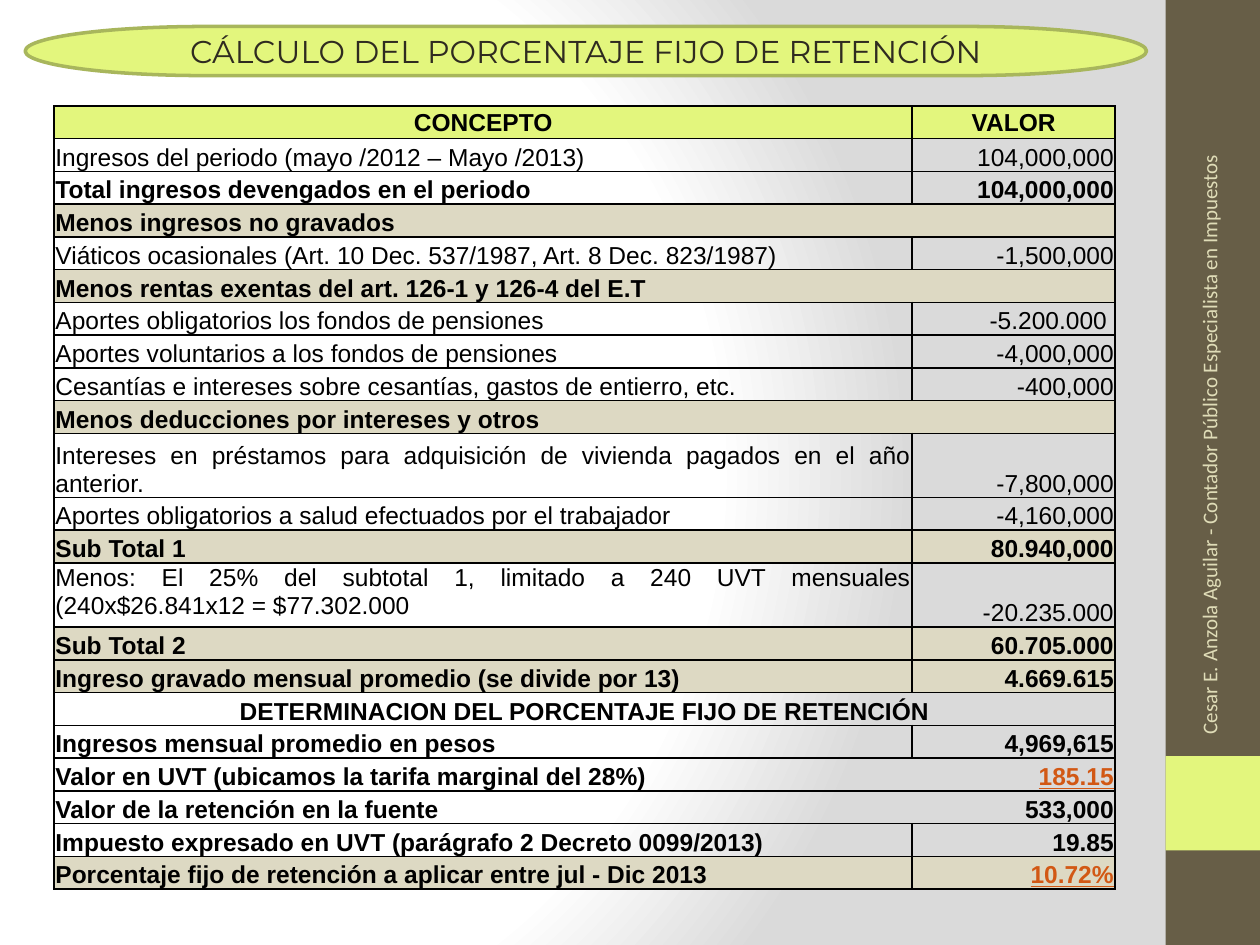
from pptx import Presentation
from pptx.dml.color import RGBColor
from pptx.enum.shapes import MSO_SHAPE
from pptx.enum.text import MSO_ANCHOR, PP_ALIGN
from pptx.oxml import parse_xml
from pptx.oxml.ns import nsdecls, qn
from pptx.util import Inches, Pt

BROWN = RGBColor(0x67, 0x5E, 0x47)
LIME = RGBColor(0xE3, 0xF6, 0x7D)
OLIVE = RGBColor(0xA8, 0xB6, 0x5C)
SAND = RGBColor(0xDF, 0xDC, 0xB7)
DARK = RGBColor(0x2F, 0x2B, 0x20)
TAN = RGBColor(0xDD, 0xD9, 0xC3)
BLACK = RGBColor(0, 0, 0)
RUST = RGBColor(0xD2, 0x58, 0x14)
LEFT, MID, RIGHT, JUST = PP_ALIGN.LEFT, PP_ALIGN.CENTER, PP_ALIGN.RIGHT, PP_ALIGN.JUSTIFY

# Label, value (None spans both columns), bold, fill, label alignment
ROWS = [
    ("CONCEPTO", "VALOR", True, LIME, MID),
    ("Ingresos del periodo (mayo /2012 – Mayo /2013)", "104,000,000", False, None, LEFT),
    ("Total ingresos devengados en el periodo", "104,000,000", True, None, LEFT),
    ("Menos ingresos no gravados", None, True, TAN, LEFT),
    ("Viáticos ocasionales (Art. 10 Dec. 537/1987, Art. 8 Dec. 823/1987)",
     "-1,500,000", False, None, JUST),
    ("Menos rentas exentas del art. 126-1 y 126-4 del E.T", None, True, TAN, LEFT),
    ("Aportes obligatorios los fondos de pensiones", "-5.200.000 ", False, None, LEFT),
    ("Aportes voluntarios a los fondos de pensiones", "-4,000,000", False, None, LEFT),
    ("Cesantías e intereses sobre cesantías, gastos de entierro, etc.",
     "-400,000", False, None, LEFT),
    ("Menos deducciones por intereses y otros", None, True, TAN, LEFT),
    ("Intereses en préstamos para adquisición de vivienda pagados en el año anterior.",
     "-7,800,000", False, None, JUST),
    ("Aportes obligatorios a salud efectuados por el trabajador",
     "-4,160,000", False, None, JUST),
    ("Sub Total 1", "80.940,000", True, TAN, LEFT),
    ("Menos: El 25% del subtotal 1, limitado a 240 UVT mensuales (240x$26.841x12 = $77.302.000",
     "-20.235.000", False, None, JUST),
    ("Sub Total 2", "60.705.000", True, TAN, LEFT),
    ("Ingreso gravado mensual promedio (se divide por 13)", "4.669.615", True, TAN, LEFT),
    ("DETERMINACION DEL PORCENTAJE FIJO DE RETENCIÓN", None, True, None, MID),
    ("Ingresos mensual promedio en pesos", "4,969,615", True, None, LEFT),
    ("Valor en UVT (ubicamos la tarifa marginal del 28%)", "185.15", True, None, LEFT),
    ("Valor de la retención en la fuente", "533,000", True, None, LEFT),
    ("Impuesto expresado en UVT (parágrafo 2 Decreto 0099/2013)", "19.85", True, None, LEFT),
    ("Porcentaje fijo de retención a aplicar entre jul - Dic 2013", "10.72%", True, TAN, LEFT),
]
TALL = (10, 13)
OPEN = (18, 19)  # rows with no line between the columns
MARKED = ("185.15", "10.72%")


def add_block(kind, left, top, width, height, fill):
    block = slide.shapes.add_shape(
        kind, Inches(left), Inches(top), Inches(width), Inches(height))
    block.shadow.inherit = False
    block.fill.solid()
    block.fill.fore_color.rgb = fill
    block.line.fill.background()
    return block


def set_edges(cell, hidden):
    """Draw 1 pt black cell borders, leaving out the hidden side."""
    props = cell._tc.get_or_add_tcPr()
    for side in "LRTB":
        paint = ("<a:noFill/>" if side == hidden else
                 f'<a:solidFill><a:srgbClr val="{BLACK}"/></a:solidFill>')
        props.append(parse_xml(
            f'<a:ln{side} {nsdecls("a")} w="{Pt(1)}">{paint}</a:ln{side}>'))


prs = Presentation()
prs.slide_width, prs.slide_height = Inches(10), Inches(7.5)
slide = prs.slides.add_slide(prs.slide_layouts[6])

# Background: radial gradient
slide.background.fill.gradient()
grad = slide._element.find(".//" + qn("a:gradFill"))
stops = "".join(
    f'<a:gs pos="{pos}000"><a:srgbClr val="{tone}"/></a:gs>'
    for pos, tone in ((0, "FFFFFF"), (75, "FFFFFF"), (100, "DADADA")))
grad.getparent().replace(grad, parse_xml(
    f'<a:gradFill {nsdecls("a")} rotWithShape="1"><a:gsLst>{stops}</a:gsLst>'
    '<a:path path="circle"><a:fillToRect l="20000" t="50000" r="100000" b="50000"/>'
    '</a:path></a:gradFill>'))

# Side band with the author's name
add_block(MSO_SHAPE.RECTANGLE, 9.25, 0, 0.75, 7.5, BROWN)
add_block(MSO_SHAPE.RECTANGLE, 9.25, 6, 0.75, 0.75, LIME)
author = slide.shapes.add_textbox(Inches(7.05), Inches(3.18), Inches(5.09), Inches(0.4))
author.rotation = 270
frame = author.text_frame
frame.word_wrap = True
frame.vertical_anchor = MSO_ANCHOR.MIDDLE
para = frame.paragraphs[0]
para.text = "Cesar E. Anzola Aguilar - Contador Público Especialista en Impuestos"
para.font.name, para.font.size = "Calibri", Pt(12)
para.font.color.rgb = SAND

# Title
title = add_block(MSO_SHAPE.FLOWCHART_TERMINATOR, 0.2, 0.21, 8.9, 0.39, LIME)
title.line.color.rgb = OLIVE
title.line.width = Pt(2)
frame = title.text_frame
frame.vertical_anchor = MSO_ANCHOR.MIDDLE
para = frame.paragraphs[0]
para.text = "CÁLCULO DEL PORCENTAJE FIJO DE RETENCIÓN"
para.alignment = MID
para.font.name, para.font.size = "Montserrat", Pt(18)
para.font.color.rgb = DARK

# Calculation table
table = slide.shapes.add_table(
    len(ROWS), 2, Inches(0.43), Inches(0.84), Inches(8.42), Inches(6.22)).table
table.first_row = table.horz_banding = False
table.columns[0].width, table.columns[1].width = Inches(6.81), Inches(1.61)

for row, (label, value, bold, fill, align) in enumerate(ROWS):
    table.rows[row].height = Inches(0.51 if row in TALL else 0.26)
    if value is None:
        table.cell(row, 0).merge(table.cell(row, 1))
    for col, text in enumerate((label, value)):
        cell = table.cell(row, col)
        set_edges(cell, "RL"[col] if row in OPEN else None)
        if fill is None:
            cell.fill.background()
        else:
            cell.fill.solid()
            cell.fill.fore_color.rgb = fill
        cell.margin_left = cell.margin_right = cell.margin_top = Inches(0.01)
        cell.margin_bottom = 0
        cell.vertical_anchor = MSO_ANCHOR.MIDDLE if row == 0 else MSO_ANCHOR.BOTTOM
        if text is None:
            continue
        para = cell.text_frame.paragraphs[0]
        para.text = text
        para.alignment = RIGHT if col and row else align
        font = para.font
        font.name, font.size, font.bold = "Arial", Pt(14), bold
        font.color.rgb = RUST if text in MARKED else BLACK
        if text in MARKED:
            font.underline = True

table.cell(13, 0).vertical_anchor = MSO_ANCHOR.TOP

prs.save("out.pptx")
